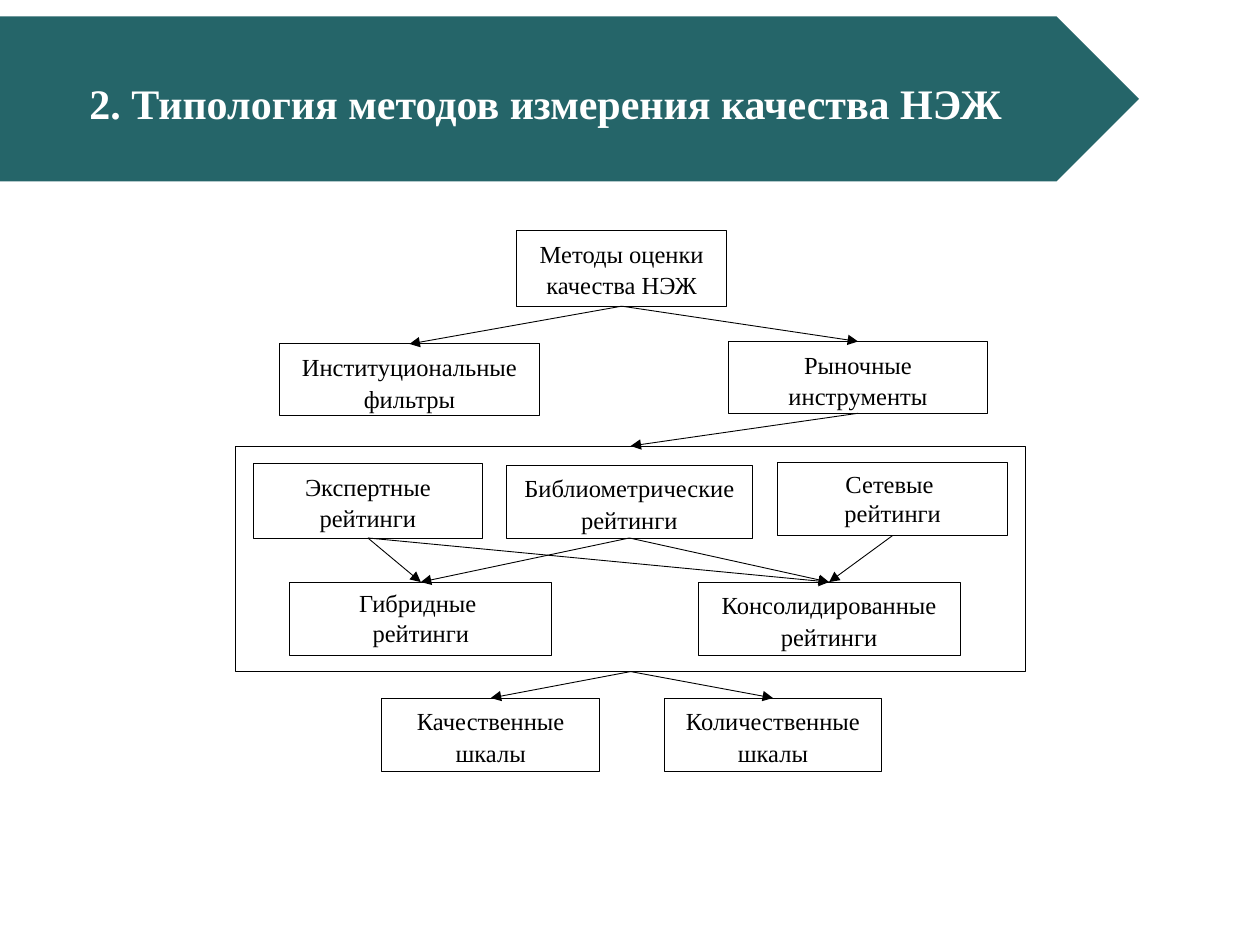
"""Build a slide with a typology of quality measurement methods."""
from dataclasses import dataclass

from pptx import Presentation
from pptx.dml.color import RGBColor
from pptx.enum.dml import MSO_LINE
from pptx.enum.shapes import MSO_CONNECTOR, MSO_SHAPE
from pptx.enum.text import MSO_ANCHOR, MSO_AUTO_SIZE, PP_ALIGN
from pptx.oxml.ns import qn
from pptx.util import Inches, Pt
from lxml import etree

RECTANGLE = MSO_SHAPE.RECTANGLE
PENTAGON = MSO_SHAPE.PENTAGON
STRAIGHT = MSO_CONNECTOR.STRAIGHT
SOLID = MSO_LINE.SOLID
TOP = MSO_ANCHOR.TOP
FIT_SHAPE = MSO_AUTO_SIZE.SHAPE_TO_FIT_TEXT
CENTER = PP_ALIGN.CENTER
TOP_SITE, BOTTOM_SITE = 0, 2


@dataclass(frozen=True)
class Theme:
    """Colours, type sizes and line widths of the slide."""

    font: str = "Times New Roman"
    banner: RGBColor = RGBColor(0x25, 0x65, 0x69)
    white: RGBColor = RGBColor(0xFF, 0xFF, 0xFF)
    black: RGBColor = RGBColor(0x00, 0x00, 0x00)
    title_size: Pt = Pt(24)
    box_size: Pt = Pt(14)
    box_line: Pt = Pt(0.5)
    frame_line: Pt = Pt(0.25)


THEME = Theme()

BOXES = {
    "methods": (4.1, 1.83, 1.67, 0.6, "Методы оценки качества НЭЖ"),
    "filters": (2.22, 2.73, 2.06, 0.57, "Институциональные фильтры"),
    "market": (5.78, 2.71, 2.06, 0.57, "Рыночные инструменты"),
    "expert": (2.01, 3.68, 1.82, 0.59, "Экспертные рейтинги"),
    "network": (6.17, 3.67, 1.83, 0.58, "Сетевые \nрейтинги"),
    "bibliometric": (4.02, 3.69, 1.95, 0.58, "Библиометрические рейтинги"),
    "hybrid": (2.3, 4.62, 2.08, 0.58, "Гибридные \nрейтинги"),
    "consolidated": (5.54, 4.62, 2.08, 0.58, "Консолидированные рейтинги"),
    "qualitative": (3.03, 5.54, 1.73, 0.58, "Качественные шкалы"),
    "quantitative": (5.27, 5.54, 1.73, 0.58, "Количественные шкалы"),
}

ARROWS = [
    ("methods", "filters"),
    ("methods", "market"),
    ("expert", "consolidated"),
    ("expert", "hybrid"),
    ("bibliometric", "hybrid"),
    ("bibliometric", "consolidated"),
    ("network", "consolidated"),
    ("market", "frame"),
    ("frame", "qualitative"),
    ("frame", "quantitative"),
]


def format_paragraph(paragraph, size, color, bold=False):
    """Centre a paragraph and set the font of its runs."""
    paragraph.alignment = CENTER
    for run in paragraph.runs:
        run.font.name = THEME.font
        run.font.size = size
        run.font.bold = bold
        run.font.color.rgb = color


def add_panel(slide, preset, left, top, width, height, fill, line_width=None):
    """Add a filled preset shape, outlined when a line width is given."""
    shape = slide.shapes.add_shape(
        preset, Inches(left), Inches(top), Inches(width), Inches(height))
    shape.shadow.inherit = False
    shape.fill.solid()
    shape.fill.fore_color.rgb = fill
    if line_width is None:
        shape.line.fill.background()
    else:
        shape.line.color.rgb = THEME.black
        shape.line.width = line_width
        shape.line.dash_style = SOLID
    return shape


def add_box(slide, left, top, width, height, text):
    """Add an outlined box with centred text."""
    shape = add_panel(slide, RECTANGLE, left, top, width, height,
                      THEME.white, THEME.box_line)
    text_frame = shape.text_frame
    text_frame.word_wrap = True
    text_frame.vertical_anchor = TOP
    text_frame.text = text
    single = len(text_frame.paragraphs) == 1
    for paragraph in text_frame.paragraphs:
        format_paragraph(paragraph, THEME.box_size, THEME.black)
        if single:
            paragraph.line_spacing = 1.07
            paragraph.space_after = Pt(8)
    return shape


def add_arrow(slide, source, target):
    """Connect the bottom of one shape to the top of another."""
    connector = slide.shapes.add_connector(STRAIGHT, 0, 0, 0, 0)
    connector.begin_connect(source, BOTTOM_SITE)
    connector.end_connect(target, TOP_SITE)
    connector.line.color.rgb = THEME.black
    connector.line.width = THEME.box_line
    properties = connector._element.spPr
    etree.SubElement(properties.find(qn("a:ln")), qn("a:tailEnd"), type="triangle")
    etree.SubElement(properties, qn("a:effectLst"))


def add_title(slide, text):
    """Add the banner and the title over it."""
    add_panel(slide, PENTAGON, 0, 0.13, 9.04, 1.31, THEME.banner)
    box = slide.shapes.add_textbox(
        Inches(0.07), Inches(0.37), Inches(8.02), Inches(0.63))
    text_frame = box.text_frame
    text_frame.word_wrap = False
    text_frame.auto_size = FIT_SHAPE
    text_frame.text = text
    paragraph = text_frame.paragraphs[0]
    format_paragraph(paragraph, THEME.title_size, THEME.white, bold=True)
    paragraph.line_spacing = 1.5
    paragraph._p.get_or_add_pPr().set("marL", str(Inches(0.5)))


def main():
    """Build and save the presentation."""
    presentation = Presentation()
    presentation.slide_width = Inches(10)
    presentation.slide_height = Inches(7.5)
    slide = presentation.slides.add_slide(presentation.slide_layouts[6])
    add_title(slide, "2.\u00a0Типология методов измерения качества НЭЖ")
    shapes = {"frame": add_panel(slide, RECTANGLE, 1.87, 3.54, 6.27, 1.79,
                                 THEME.white, THEME.frame_line)}
    for name, box in BOXES.items():
        shapes[name] = add_box(slide, *box)
    for source, target in ARROWS:
        add_arrow(slide, shapes[source], shapes[target])
    presentation.save("out.pptx")


main()
